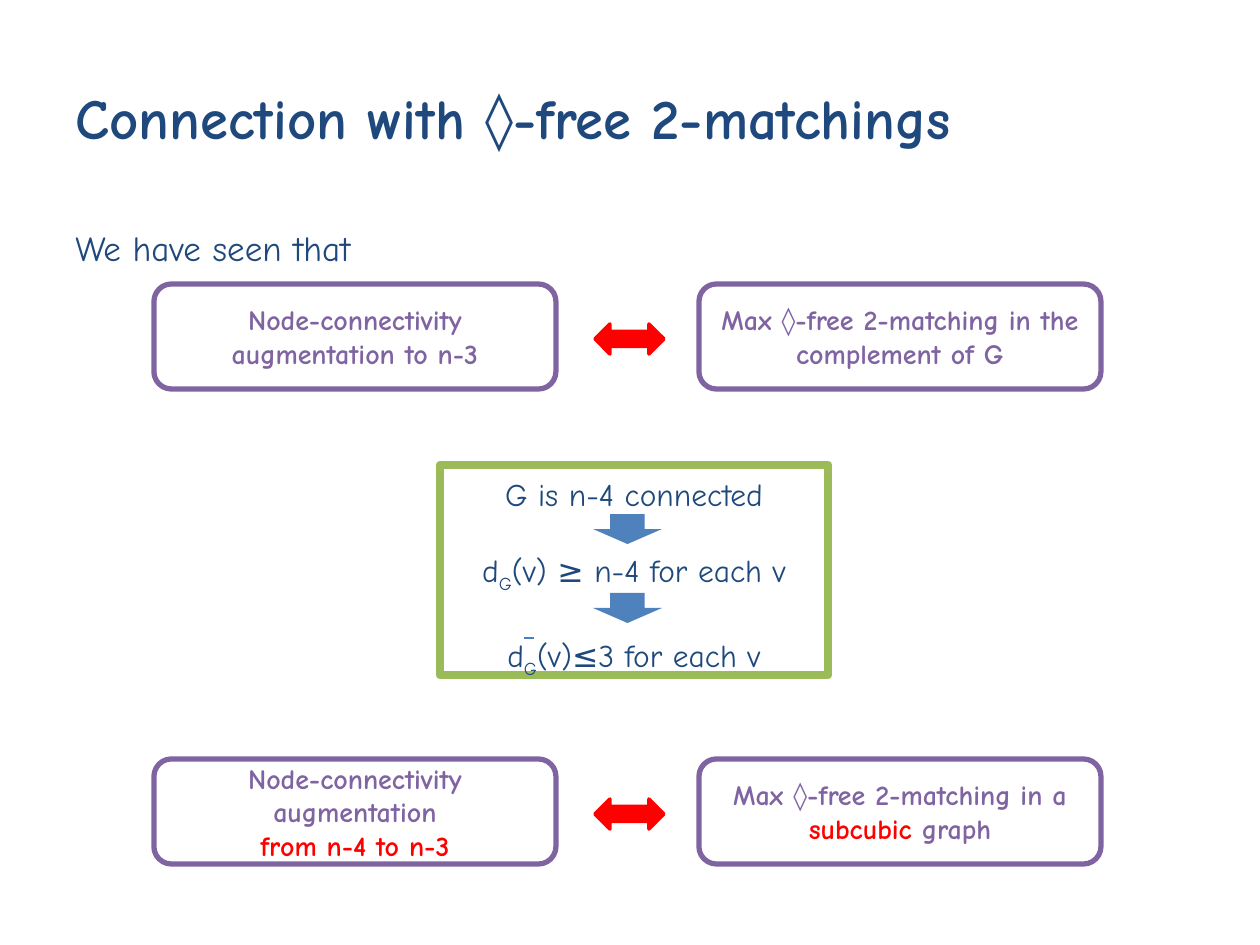
from pptx import Presentation
from pptx.dml.color import RGBColor
from pptx.enum.shapes import MSO_CONNECTOR as Link, MSO_SHAPE as Kind
from pptx.enum.text import MSO_ANCHOR as Anchor, MSO_AUTO_SIZE as Fit, PP_ALIGN as Align
from pptx.oxml.ns import qn
from pptx.util import Pt
from lxml import etree

SCALE = 914400 / 126
NAVY, PURPLE, RED = "1F497D", "8064A2", "FF0000"
GREEN, BLUE, BAR = "9BBB59", "4F81BD", "4B7EBC"


def px(*vals):
    return [round(v * SCALE) for v in vals]


def rgb(code):
    return RGBColor.from_string(code)


class Deck:
    font = "Comic Neue"

    def __init__(self):
        self.prs = Presentation()
        self.prs.slide_width, self.prs.slide_height = px(1260, 945)
        self.slide = self.prs.slides.add_slide(self.prs.slide_layouts[5])

    def put(self, frame, paras, size, bold=False, align=Align.CENTER,
            anchor=Anchor.MIDDLE, gaps=()):
        frame.word_wrap = True
        frame.auto_size = Fit.NONE
        frame.vertical_anchor = anchor
        for i, runs in enumerate(paras):
            para = frame.add_paragraph() if i else frame.paragraphs[0]
            para.alignment = align
            if gaps:
                para.space_before = Pt(gaps[i])
            for text, color, *base in runs:
                run = para.add_run()
                run.text = text
                run.font.name = self.font
                run.font.size = Pt(size)
                run.font.bold = bold
                run.font.color.rgb = rgb(color)
                if base:
                    run._r.get_or_add_rPr().set("baseline", str(base[0]))

    def title(self, box, text):
        shape = self.slide.shapes.title
        shape.left, shape.top, shape.width, shape.height = px(*box)
        self.put(shape.text_frame, [[(text, NAVY)]], 32.4, True, Align.LEFT)

    def text(self, box, text, size):
        frame = self.slide.shapes.add_textbox(*px(*box)).text_frame
        self.put(frame, [[(text, NAVY)]], size, align=Align.LEFT,
                 anchor=Anchor.TOP, gaps=[4])

    def shape(self, kind, box, fill=None, line=None, width=0):
        shape = self.slide.shapes.add_shape(kind, *px(*box))
        shape.shadow.inherit = False
        if fill:
            shape.fill.solid()
            shape.fill.fore_color.rgb = rgb(fill)
        else:
            shape.fill.background()
        if line:
            shape.line.color.rgb = rgb(line)
            shape.line.width = Pt(width)
        else:
            shape.line.fill.background()
        return shape

    def card(self, box, paras):
        shape = self.shape(Kind.ROUNDED_RECTANGLE, box, line=PURPLE, width=3)
        self.put(shape.text_frame, paras, 16, True)

    def panel(self, box, paras, gaps):
        frame = self.shape(Kind.RECTANGLE, box, line=GREEN, width=5).text_frame
        frame.margin_left, frame.margin_top = px(10, 10)
        frame.margin_right, frame.margin_bottom = px(10, 10)
        self.put(frame, paras, 18, anchor=Anchor.TOP, gaps=gaps)

    def bar(self, *ends):
        line = self.slide.shapes.add_connector(Link.STRAIGHT, *px(*ends))
        line.line.color.rgb = rgb(BAR)
        line.line.width = Pt(1.5)
        etree.SubElement(line._element.spPr, qn("a:effectLst"))


def main():
    deck = Deck()
    deck.title((63, 38, 1134, 158), "Connection with ◊-free 2-matchings")
    deck.text((63, 220, 1134, 60), "We have seen that", 20)

    rows = [
        (284, [[("Node-connectivity augmentation to n-3", PURPLE)]],
         [[("Max ◊-free 2-matching in the complement of G", PURPLE)]]),
        (759, [[("Node-connectivity augmentation", PURPLE)],
               [("from n-4 to n-3", RED)]],
         [[("Max ◊-free 2-matching in a ", PURPLE),
           ("subcubic ", RED), ("graph", PURPLE)]]),
    ]
    for top, left, right in rows:
        deck.card((154, top, 402, 105), left)
        deck.card((699, top, 402, 105), right)
        deck.shape(Kind.LEFT_RIGHT_ARROW, (595, top + 40, 69, 30), RED, RED, 2)

    sub = ("G", NAVY, -25000)
    deck.panel((440, 465, 388, 210), [
        [("G is n-4 connected", NAVY)],
        [("d", NAVY), sub, ("(v) ≥ n-4 for each v", NAVY)],
        [("d", NAVY), sub, ("(v)≤3 for each v", NAVY)],
    ], (0, 22, 24))
    for top in (514, 593):
        deck.shape(Kind.DOWN_ARROW, (593, top, 69, 30), BLUE)
    deck.bar(534, 638, 524, 638)

    deck.prs.save("out.pptx")


if __name__ == "__main__":
    main()
